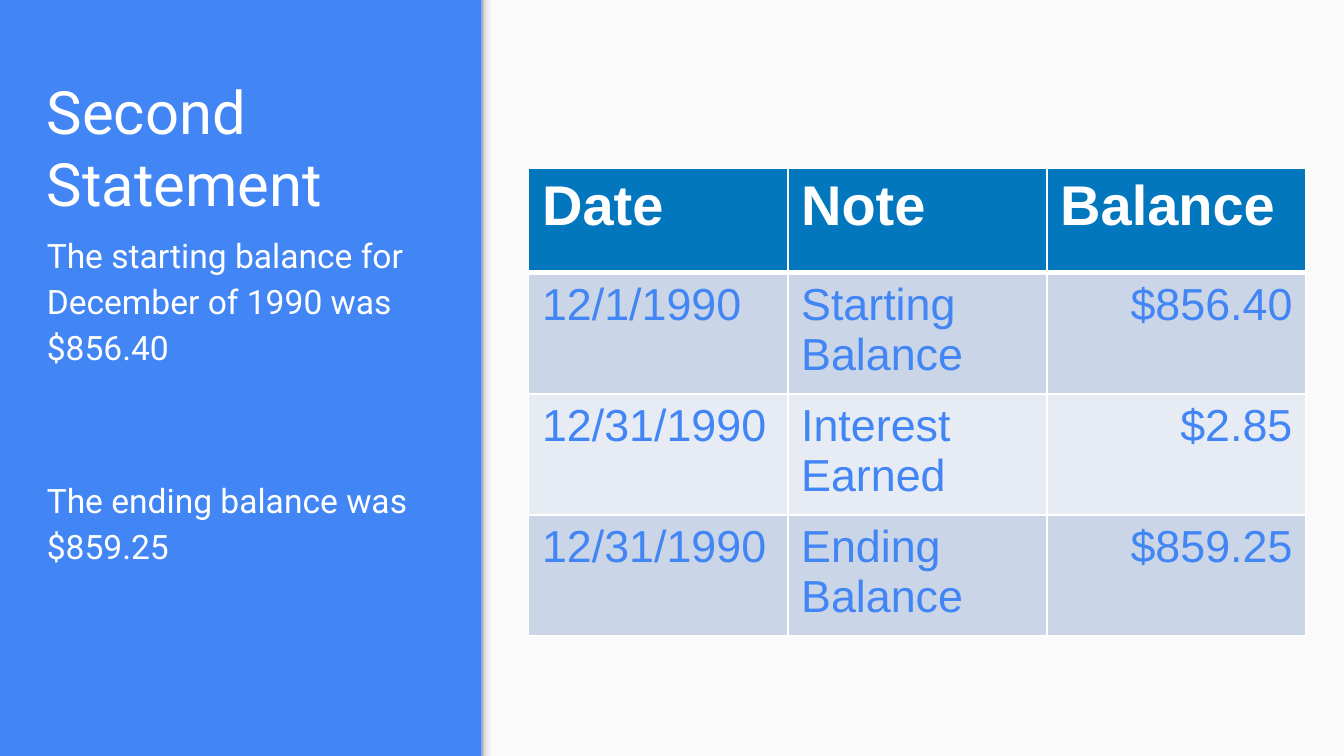
from copy import deepcopy

from lxml import etree
from pptx import Presentation
from pptx.dml.color import RGBColor
from pptx.enum.shapes import MSO_SHAPE
from pptx.enum.text import MSO_ANCHOR, PP_ALIGN
from pptx.oxml.ns import qn
from pptx.util import Pt

RECTANGLE = MSO_SHAPE.RECTANGLE
TOP, BOTTOM = MSO_ANCHOR.TOP, MSO_ANCHOR.BOTTOM
LEFT, RIGHT = PP_ALIGN.LEFT, PP_ALIGN.RIGHT

COLORS = {
    "blue": "4285F4",
    "panel": "FAFAFA",
    "white": "FFFFFF",
    "header": "0277BD",
    "band_dark": "CAD5E7",
    "band_light": "E6EBF4",
}
SLIDE_W, SLIDE_H = 720, 405
PANEL_LEFT = 258
INSET = 7.2


def add_run(paragraph, text, size, font, color, bold=False):
    run = paragraph.add_run()
    run.text = text
    run.font.size = Pt(size)
    run.font.name = font
    run.font.bold = bold
    run.font.color.rgb = RGBColor.from_string(COLORS[color])


def set_borders(cell, bottom_width):
    """Give a cell white 1 pt borders, with its own width at the bottom."""
    properties = cell._tc.get_or_add_tcPr()
    widths = {"a:lnL": 1, "a:lnR": 1, "a:lnT": 1, "a:lnB": bottom_width}
    for position, (side, width) in enumerate(widths.items()):
        line = etree.Element(qn(side), w=str(Pt(width)))
        fill = etree.SubElement(line, qn("a:solidFill"))
        etree.SubElement(fill, qn("a:srgbClr"), val=COLORS["white"])
        properties.insert(position, line)


prs = Presentation()
prs.slide_width, prs.slide_height = Pt(SLIDE_W), Pt(SLIDE_H)
slide = prs.slides.add_slide(prs.slide_layouts[6])
slide.background.fill.solid()
slide.background.fill.fore_color.rgb = RGBColor.from_string(COLORS["blue"])

# Light panel with a soft shaded edge
panel = slide.shapes.add_shape(
    RECTANGLE, Pt(PANEL_LEFT), 0, Pt(SLIDE_W - PANEL_LEFT), Pt(SLIDE_H))
panel.fill.solid()
panel.fill.fore_color.rgb = RGBColor.from_string(COLORS["panel"])

edge = slide.shapes.add_shape(RECTANGLE, Pt(PANEL_LEFT), 0, Pt(8.4), Pt(SLIDE_H))
edge.fill.gradient()
edge.fill.gradient_angle = 0
stop_list = edge.element.spPr.find(qn("a:gradFill")).find(qn("a:gsLst"))
for extra_stop in [deepcopy(stop) for stop in stop_list]:
    stop_list.append(extra_stop)
shades = [(0, "999999"), (0.2, "DEDEDE"), (0.64, "F9F9F9"), (1, "F9F9F9")]
for stop, (position, shade) in zip(edge.fill.gradient_stops, shades):
    stop.position = position
    stop.color.rgb = RGBColor.from_string(shade)

for shape in (panel, edge):
    shape.line.fill.background()
    shape.shadow.inherit = False

# Title and summary: top, height, anchor, size, line spacing, (space before, text)
text_blocks = [
    (28, 96, BOTTOM, 32, 1.0, [(0, "Second Statement")]),
    (115.2, 249, TOP, 18, 1.15, [
        (0, "The starting balance for December of 1990 was $856.40"),
        (56.8, "The ending balance was $859.25"),
    ]),
]
for top, height, anchor, size, spacing, paragraphs in text_blocks:
    frame = slide.shapes.add_textbox(Pt(18), Pt(top), Pt(221), Pt(height)).text_frame
    frame.word_wrap = True
    frame.vertical_anchor = anchor
    frame.margin_left = frame.margin_right = Pt(INSET)
    frame.margin_top = frame.margin_bottom = Pt(INSET)
    for index, (space_before, text) in enumerate(paragraphs):
        paragraph = frame.add_paragraph() if index else frame.paragraphs[0]
        paragraph.line_spacing = spacing
        paragraph.space_before = Pt(space_before)
        add_run(paragraph, text, size, "Roboto", "white")

# Statement table
statement = [
    ("Date", "Note", "Balance"),
    ("12/1/1990", "Starting Balance", "$856.40"),
    ("12/31/1990", "Interest Earned", "$2.85"),
    ("12/31/1990", "Ending Balance", "$859.25"),
]
COLUMN_W, ROW_H = 138.8, 56
table = slide.shapes.add_table(
    len(statement), 3, Pt(283.2), Pt(90.2), Pt(3 * COLUMN_W), Pt(4 * ROW_H)).table
for column in table.columns:
    column.width = Pt(COLUMN_W)
for row_index, entries in enumerate(statement):
    is_header = row_index == 0
    band = "header" if is_header else ("band_light", "band_dark")[row_index % 2]
    table.rows[row_index].height = Pt(ROW_H)
    for column_index, entry in enumerate(entries):
        cell = table.cell(row_index, column_index)
        cell.margin_left = cell.margin_right = Pt(INSET)
        cell.margin_top = cell.margin_bottom = Pt(3.6)
        cell.fill.solid()
        cell.fill.fore_color.rgb = RGBColor.from_string(COLORS[band])
        set_borders(cell, 3 if is_header else 1)
        paragraph = cell.text_frame.paragraphs[0]
        is_amount = column_index == 2 and not is_header
        paragraph.alignment = RIGHT if is_amount else LEFT
        if is_header:
            add_run(paragraph, entry, 30, "Arial", "white", bold=True)
        else:
            add_run(paragraph, entry, 24, "Arial", "blue")

prs.save("out.pptx")
